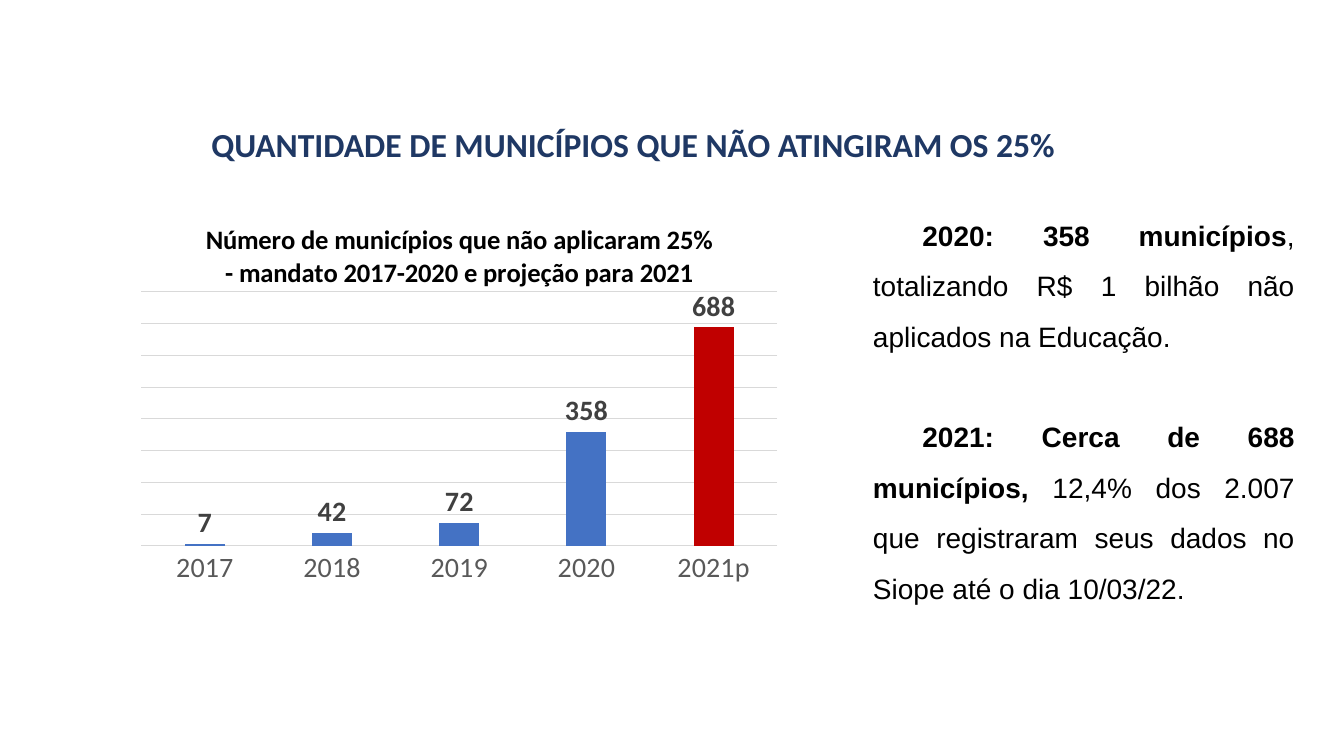
import pptx
import pptx.util
import pptx.chart.data
import pptx.dml.color
import pptx.enum.chart
import pptx.enum.text
import pptx.oxml
import pptx.oxml.ns

Inches = pptx.util.Inches
Pt = pptx.util.Pt
RGBColor = pptx.dml.color.RGBColor
ALIGN = pptx.enum.text.PP_ALIGN
CHART = pptx.enum.chart

NAVY = RGBColor(0x1F, 0x38, 0x64)
BLACK = RGBColor(0, 0, 0)
BLUE = RGBColor(0x44, 0x72, 0xC4)
RED = RGBColor(0xC0, 0, 0)
DARK = RGBColor(0x40, 0x40, 0x40)
GRAY = RGBColor(0x59, 0x59, 0x59)
PALE = RGBColor(0xD9, 0xD9, 0xD9)


def style(font, size, color, bold=False, name="Calibri"):
    font.size = Pt(size)
    font.color.rgb = color
    font.bold = bold
    font.name = name


def write(para, text, **form):
    """Add a run of text to a paragraph; form goes to style."""
    run = para.add_run()
    run.text = text
    style(run.font, **form)


deck = pptx.Presentation()
deck.slide_width = Inches(13.33)
deck.slide_height = Inches(7.5)
slide = deck.slides.add_slide(deck.slide_layouts[6])

# Chart
data = pptx.chart.data.CategoryChartData()
data.categories = ["2017", "2018", "2019", "2020", "2021p"]
data.add_series("Municípios", [7, 42, 72, 358, 688])
chart = slide.shapes.add_chart(
    CHART.XL_CHART_TYPE.COLUMN_CLUSTERED,
    Inches(1.27), Inches(1.95), Inches(6.57), Inches(3.94), data).chart
chart.has_legend = False
style(chart.font, 10, BLACK)

head = chart.chart_title
write(head.text_frame.paragraphs[0],
      "Número de municípios que não aplicaram 25% - mandato 2017-2020 e projeção para 2021",
      size=19, color=BLACK, bold=True)
head.include_in_layout = False

plot = chart.plots[0]
plot.gap_width = 219
plot.overlap = -27
plot.vary_by_categories = False
bars = plot.series[0]
bars.format.fill.solid()
bars.format.fill.fore_color.rgb = BLUE
last = bars.points[4].format.fill
last.solid()
last.fore_color.rgb = RED
labels = bars.data_labels
labels.show_value = True
labels.position = CHART.XL_LABEL_POSITION.OUTSIDE_END
style(labels.font, 20, DARK, bold=True)

years = chart.category_axis
years.major_tick_mark = CHART.XL_TICK_MARK.NONE
style(years.tick_labels.font, 20, GRAY)
count = chart.value_axis
count.visible = False
count.minimum_scale = 0
count.maximum_scale = 800
count.major_unit = 100
count.has_major_gridlines = True
for line in (years.format.line, count.major_gridlines.format.line):
    line.color.rgb = PALE
    line.width = Pt(0.75)

# Fixed places of the title and the plot area, as shares of the chart
area = chart._chartSpace.chart.plotArea
title = head._element
for node, spot, inner in ((title, {"x": 0.11, "y": 0.05}, ""),
                          (area, {"x": 0.02, "y": 0.24, "w": 0.96, "h": 0.64},
                           '<c:layoutTarget val="inner"/>')):
    for old in node.findall(pptx.oxml.ns.qn("c:layout")):
        node.remove(old)
    modes = "".join(f'<c:{key}Mode val="edge"/>' for key in "xy")
    sizes = "".join(f'<c:{key} val="{val}"/>' for key, val in spot.items())
    layout = pptx.oxml.parse_xml(
        f'<c:layout {pptx.oxml.ns.nsdecls("c")}><c:manualLayout>'
        f'{inner}{modes}{sizes}</c:manualLayout></c:layout>')
    node.insert(1 if node is title else 0, layout)

# Heading
frame = slide.shapes.add_textbox(
    Inches(1.89), Inches(1.18), Inches(8.78), Inches(0.5)).text_frame
frame.word_wrap = True
para = frame.paragraphs[0]
para.alignment = ALIGN.CENTER
write(para, "QUANTIDADE DE MUNICÍPIOS QUE NÃO ATINGIRAM OS 25%",
      size=24, color=NAVY, bold=True)

# Notes beside the chart
frame = slide.shapes.add_textbox(
    Inches(8.56), Inches(1.95), Inches(4.38), Inches(4.09)).text_frame
frame.word_wrap = True
notes = [
    ("2020: 358 municípios",
     ", totalizando R$ 1 bilhão não aplicados na Educação."),
    ("2021: Cerca de 688 municípios,",
     " 12,4% dos 2.007 que registraram seus dados no Siope até o dia 10/03/22."),
]
for i, (lead, rest) in enumerate(notes):
    para = frame.add_paragraph() if i else frame.paragraphs[0]
    para.alignment = ALIGN.JUSTIFY
    para.line_spacing = 1.5
    if i:
        para.space_before = Pt(36)
    para._p.get_or_add_pPr().set("indent", str(Inches(0.49)))
    write(para, lead, size=20, color=BLACK, bold=True, name="Arial")
    write(para, rest, size=20, color=BLACK, name="Arial")

deck.save("out.pptx")
